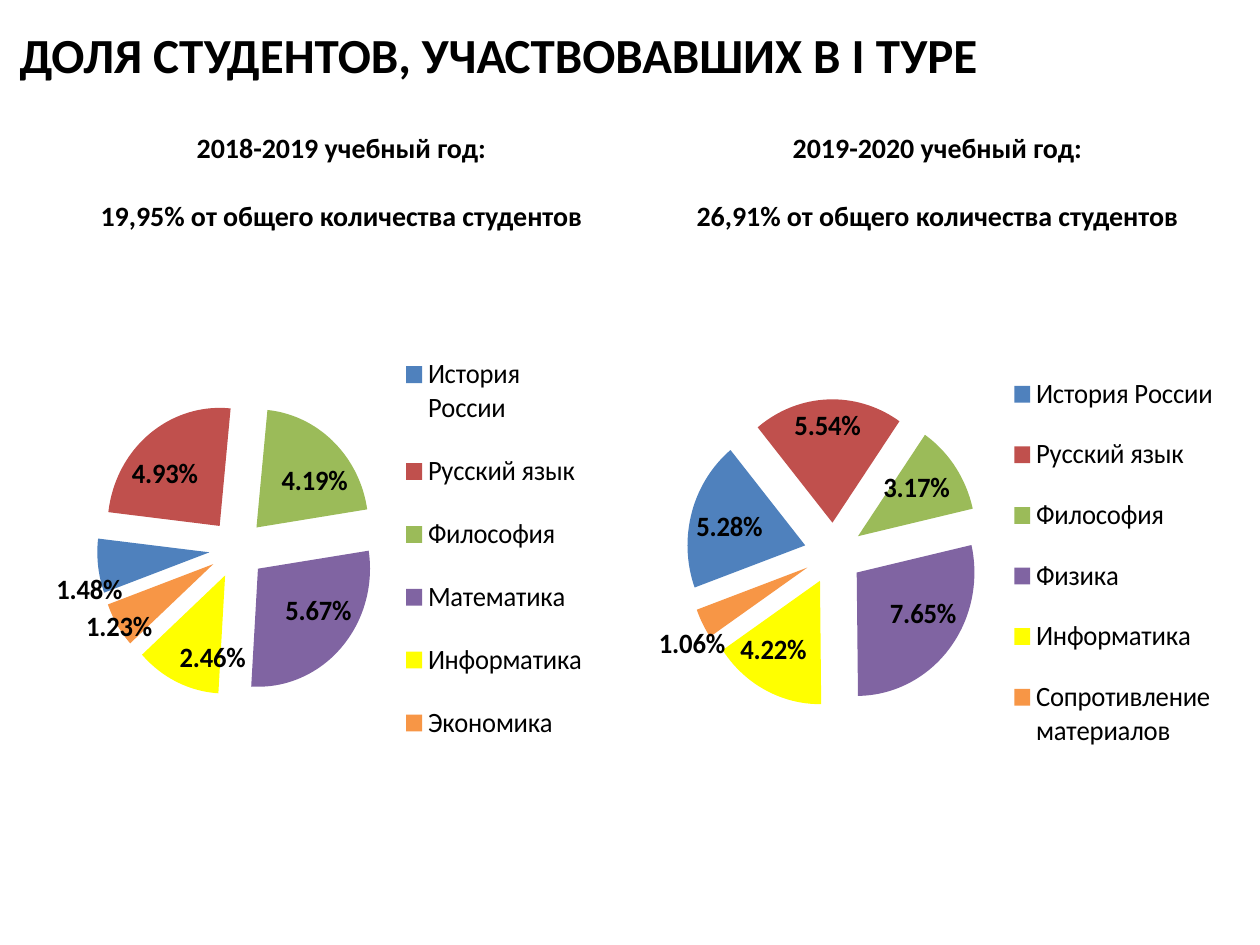
from dataclasses import dataclass

from lxml import etree
from pptx import Presentation
from pptx.chart.data import CategoryChartData
from pptx.dml.color import RGBColor
from pptx.enum.chart import XL_CHART_TYPE, XL_LABEL_POSITION, XL_LEGEND_POSITION
from pptx.enum.text import MSO_ANCHOR, PP_ALIGN
from pptx.oxml.ns import qn
from pptx.util import Inches, Pt

PIE = XL_CHART_TYPE.PIE
BEST_FIT, INSIDE_END = XL_LABEL_POSITION.BEST_FIT, XL_LABEL_POSITION.INSIDE_END
RIGHT = XL_LEGEND_POSITION.RIGHT
CENTER = PP_ALIGN.CENTER
TOP, MIDDLE = MSO_ANCHOR.TOP, MSO_ANCHOR.MIDDLE


@dataclass(frozen=True)
class Theme:
    """Colours, font and type sizes of the slide."""
    font: str = "Calibri"
    text: str = "000000"
    slices: tuple = ("4F81BD", "C0504D", "9BBB59", "8064A2", "FFFF00", "F79646")
    title: int = 28
    body: int = 16
    chart: int = 10


THEME = Theme()

YEARS = [
    dict(
        lines=["2018-2019 учебный год:", "19,95% от общего количества студентов"],
        shares={"История России": 0.0148, "Русский язык": 0.0493,
                "Философия": 0.0419, "Математика": 0.0567,
                "Информатика": 0.0246, "Экономика": 0.0123},
        heading_box=(0.35, 0.99, 4.72, 0.91),
        chart_box=(0.2, 2.02, 4.88, 4.92),
        plot=(0.07, 0.09, 0.48, 0.77),
        legend=(0.59, 0.12, 0.32, 0.71),
        inside=[4],
        moved={0: (0.05, 0.01), 5: (0.07, -0.03)},
    ),
    dict(
        lines=["2019-2020 учебный год:", "26,91% от общего количества студентов"],
        shares={"История России": 0.0528, "Русский язык": 0.0554,
                "Философия": 0.0317, "Физика": 0.0765,
                "Информатика": 0.0422, "Сопротивление материалов": 0.0106},
        heading_box=(5.08, 0.99, 4.72, 0.91),
        chart_box=(5, 2.1, 4.8, 4.88),
        plot=(0.05, 0.06, 0.51, 0.82),
        legend=(0.61, 0.14, 0.36, 0.69),
        inside=[2],
        moved={5: (0.05, 0)},
    ),
]


def inches(box):
    """Convert a box of plain numbers to lengths."""
    return [Inches(n) for n in box]


def style(font, size, bold=False):
    """Apply the theme font and text colour."""
    font.name, font.size, font.bold = THEME.font, Pt(size), bold
    font.color.rgb = RGBColor.from_string(THEME.text)


def add_text(s, box, lines, size=THEME.body, anchor=TOP, gap=0):
    """Add centred bold lines, with a gap in points between them."""
    tf = s.shapes.add_textbox(*inches(box)).text_frame
    tf.word_wrap, tf.vertical_anchor = True, anchor
    for i, line in enumerate(lines):
        p = tf.paragraphs[0] if i == 0 else tf.add_paragraph()
        p.alignment = CENTER
        p.space_before = Pt(gap if i else 0)
        r = p.add_run()
        r.text = line
        style(r.font, size, bold=True)


def add_value(parent, tag, value):
    """Append a chart element that carries one value."""
    return etree.SubElement(parent, qn(tag), val=str(value))


def set_layout(parent, index, box, inner=False, edge=True):
    """Place a chart part by fractions of the chart area."""
    for old in parent.findall(qn("c:layout")):
        parent.remove(old)
    layout = etree.Element(qn("c:layout"))
    manual = etree.SubElement(layout, qn("c:manualLayout"))
    if inner:
        add_value(manual, "c:layoutTarget", "inner")
    if edge:
        for axis in "xy":
            add_value(manual, f"c:{axis}Mode", "edge")
    for name, value in zip("xywh", box):
        add_value(manual, f"c:{name}", value)
    parent.insert(index, layout)


def explode(plot, series, amount, start):
    """Pull the slices apart and turn the pie to its start angle."""
    ser = series._element
    explosion = etree.Element(qn("c:explosion"), val=str(amount))
    ser.find(qn("c:cat")).addprevious(explosion)
    pie = plot._element
    for old in pie.findall(qn("c:firstSliceAng")):
        pie.remove(old)
    add_value(pie, "c:firstSliceAng", start)


def label_slices(series, inside, moved):
    """Show the values, with some labels set inside or moved."""
    labels = series.data_labels
    labels.show_value, labels.show_percentage = True, False
    labels.number_format, labels.number_format_is_linked = "0.00%", False
    labels.position = BEST_FIT
    style(labels.font, THEME.body, bold=True)
    for i in sorted([*inside, *moved]):
        label = series.points[i].data_label
        style(label.font, THEME.body, bold=True)
        label.position = INSIDE_END if i in inside else BEST_FIT
    for element in labels._element.findall(qn("c:dLbl")):
        i = int(element.find(qn("c:idx")).get("val"))
        if i in moved:
            set_layout(element, 1, moved[i], edge=False)


def add_pie(s, box, shares, plot_box, legend_box, inside, moved):
    """Add an exploded pie with value labels and a legend."""
    data = CategoryChartData(number_format="0.00%")
    data.categories = list(shares)
    data.add_series("Series 1", list(shares.values()))
    chart = s.shapes.add_chart(PIE, *inches(box), data).chart
    chart.has_title = False
    style(chart.font, THEME.chart)

    chart.has_legend = True
    legend = chart.legend
    legend.position, legend.include_in_layout = RIGHT, False
    style(legend.font, THEME.body)
    set_layout(legend._element, 1, legend_box)

    plot = chart.plots[0]
    plot.vary_by_categories = True
    series = plot.series[0]
    explode(plot, series, amount=25, start=250)
    for i, color in enumerate(THEME.slices):
        fill = series.points[i].format.fill
        fill.solid()
        fill.fore_color.rgb = RGBColor.from_string(color)
    label_slices(series, inside, moved)
    set_layout(plot._element.getparent(), 0, plot_box, inner=True)


def add_year(s, lines, shares, heading_box, chart_box, plot, legend, inside, moved):
    """Add the heading and the pie of one academic year."""
    add_text(s, heading_box, lines, gap=19.5)
    add_pie(s, chart_box, shares, plot, legend, inside, moved)


def main():
    """Build the slide and save it."""
    prs = Presentation()
    prs.slide_width, prs.slide_height = Inches(10), Inches(7.5)
    s = prs.slides.add_slide(prs.slide_layouts[6])
    add_text(s, (0, 0.13, 7.91, 0.6), ["ДОЛЯ СТУДЕНТОВ, УЧАСТВОВАВШИХ В I ТУРЕ"],
             size=THEME.title, anchor=MIDDLE)
    for year in YEARS:
        add_year(s, **year)
    prs.save("out.pptx")


if __name__ == "__main__":
    main()
